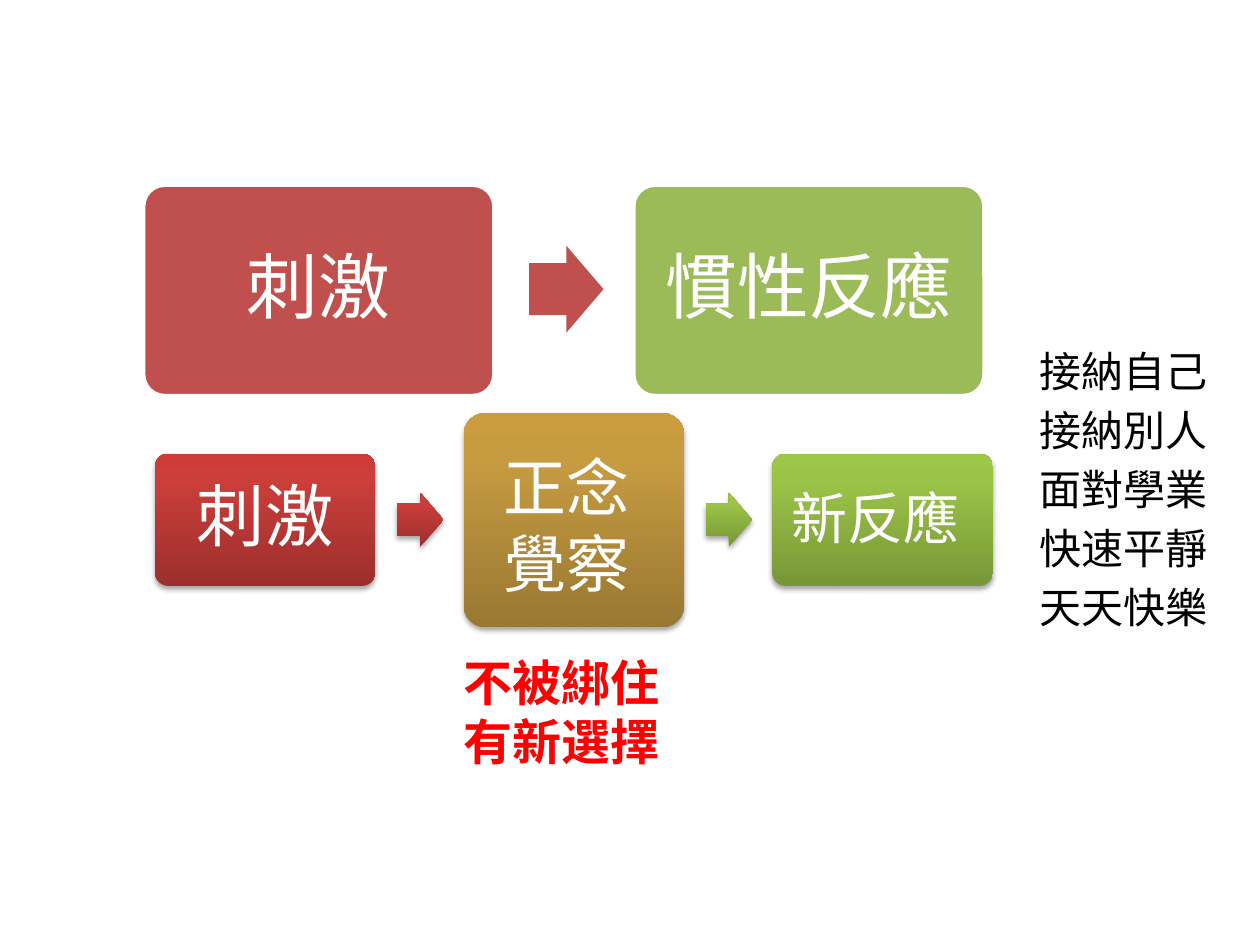
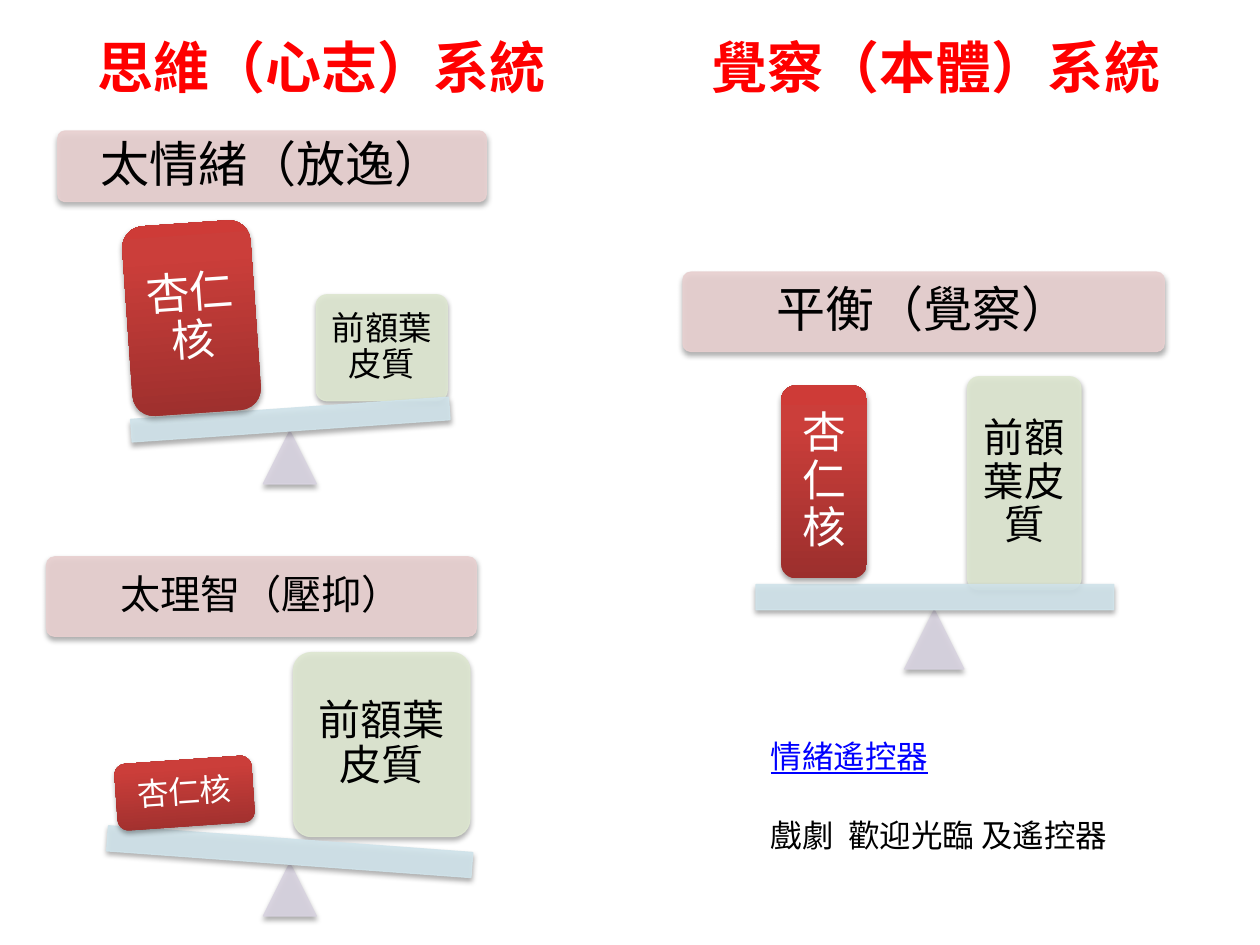
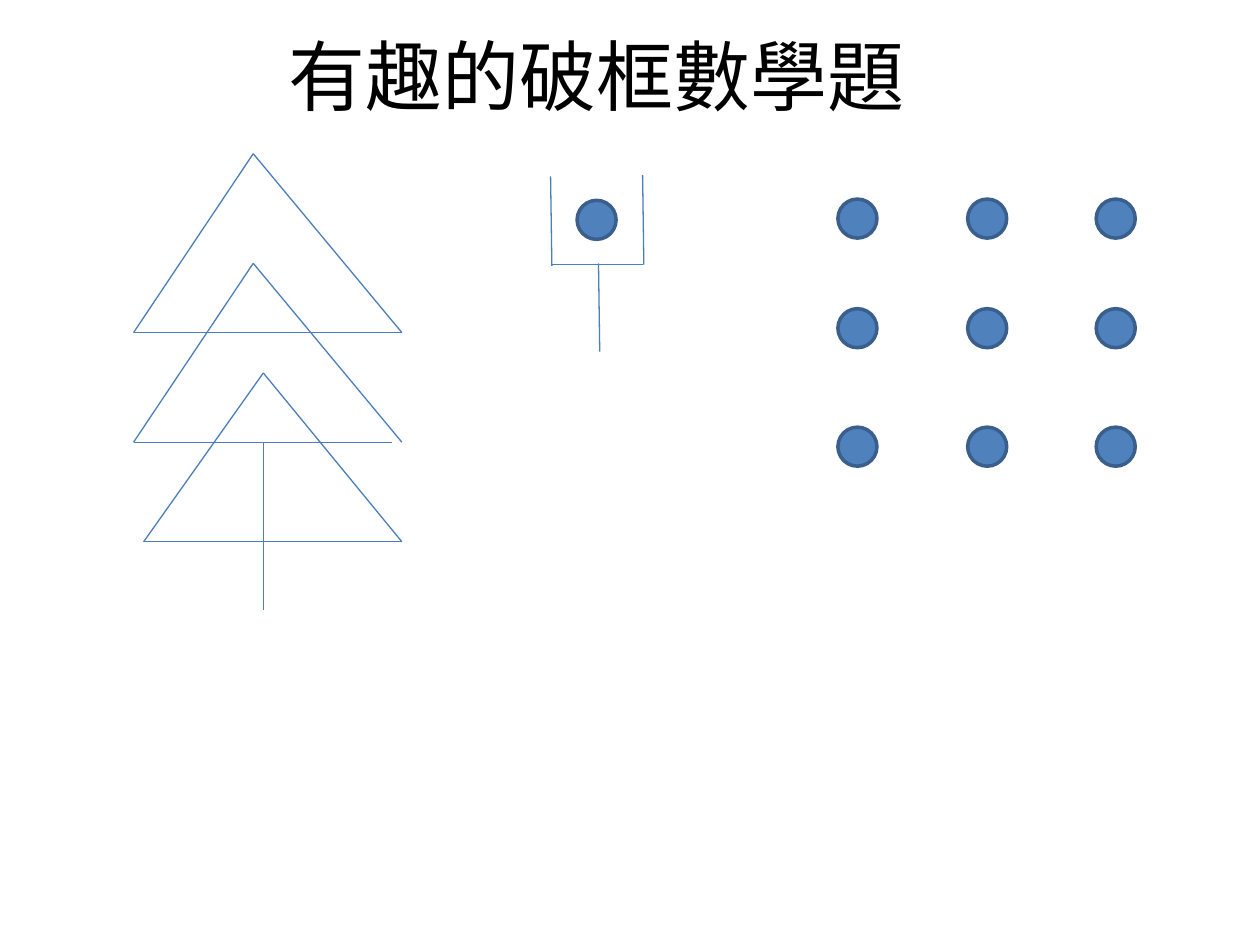
from dataclasses import dataclass
from itertools import product

from lxml.etree import SubElement
from pptx import Presentation
from pptx.dml.color import RGBColor
from pptx.enum.shapes import MSO_CONNECTOR, MSO_SHAPE
from pptx.enum.text import MSO_ANCHOR, MSO_AUTO_SIZE, PP_ALIGN
from pptx.oxml.ns import qn
from pptx.util import Inches, Pt

# Shared look
FONT = "Calibri"
TITLE_FONT = "Noto Sans CJK SC"
BLACK, WHITE, HEADING_RED, LINK_BLUE = "000000", "FFFFFF", "FF0000", "0000FF"
FLAT_RED, FLAT_GREEN = "C0504D", "9BBB59"
RED = ("9C2F2D", "CB3E3A", "CE3B37")
GOLD = ("997832", "C79C41", "CB9D3F")
GREEN = ("779737", "9BC348", "9DC746")
GRADIENT_STOPS = (0, 80, 100)
PINK, PALE_GREEN, LILAC, PALE_BLUE = "E8D0D0", "DEE7D1", "D8D3E0", "D0E3EA"
STROKE, DOT_FILL, DOT_LINE = "4B7EBC", "4F81BD", "3A5F8C"
CORNER = 0.1
DOT_SIZE = 0.31


@dataclass
class Box:
    left: float
    top: float
    width: float
    height: float
    rotation: float = 0

    def lengths(self):
        return [Inches(n) for n in (self.left, self.top, self.width, self.height)]


@dataclass
class Label:
    text: str
    size: float
    color: str = BLACK
    inset: float = 0.1
    bold: bool = False
    underline: bool = False
    font: str = FONT


@dataclass
class Seesaw:
    caption: Box
    caption_label: Label
    cortex: Box
    cortex_label: Label
    fulcrum: Box
    plank: Box
    amygdala: Box
    amygdala_label: Label


@dataclass
class Tier:
    apex: tuple[float, float]
    left: float
    right: float
    base: float
    base_right: float


def rgb(color: str) -> RGBColor:
    return RGBColor.from_string(color)


# Text
def add_run(paragraph, text: str, label: Label) -> None:
    run = paragraph.add_run()
    run.text = text
    font = run.font
    font.name, font.size, font.bold = label.font, Pt(label.size), label.bold
    font.underline = label.underline
    font.color.rgb = rgb(label.color)


def write_lines(shape, label: Label, wrap: bool = True) -> None:
    """Left-aligned lines from the top, one paragraph each."""
    frame = shape.text_frame
    frame.word_wrap = wrap
    frame.auto_size = MSO_AUTO_SIZE.SHAPE_TO_FIT_TEXT
    frame.vertical_anchor = MSO_ANCHOR.TOP
    for index, line in enumerate(label.text.split("\n")):
        paragraph = frame.add_paragraph() if index else frame.paragraphs[0]
        paragraph.alignment = PP_ALIGN.LEFT
        paragraph.space_before = Pt(0)
        add_run(paragraph, line, label)


def add_text(slide, box: Box, label: Label, wrap: bool = True) -> None:
    write_lines(slide.shapes.add_textbox(*box.lengths()), label, wrap)


def fill_placeholder(placeholder, box: Box, label: Label, wrap: bool = True) -> None:
    placeholder.left, placeholder.top, placeholder.width, placeholder.height = box.lengths()
    write_lines(placeholder, label, wrap)


def write_centred(shape, label: Label) -> None:
    frame = shape.text_frame
    frame.word_wrap = True
    frame.vertical_anchor = MSO_ANCHOR.MIDDLE
    inset = Inches(label.inset)
    frame.margin_left = frame.margin_right = inset
    frame.margin_top = frame.margin_bottom = inset
    paragraph = frame.paragraphs[0]
    paragraph.alignment = PP_ALIGN.CENTER
    paragraph.line_spacing = 0.9
    add_run(paragraph, label.text, label)


# Shapes
def add_shape(slide, kind, box: Box, label: Label | None = None, corner: float | None = None):
    shape = slide.shapes.add_shape(kind, *box.lengths())
    shape.rotation = box.rotation
    shape.shadow.inherit = False
    shape.line.fill.background()
    if corner is not None:
        shape.adjustments[0] = corner
    if label:
        write_centred(shape, label)
    return shape


def paint(shape, fill: str, line: str | None = None, width: float = 2) -> None:
    shape.fill.solid()
    shape.fill.fore_color.rgb = rgb(fill)
    if line:
        shape.line.color.rgb = rgb(line)
        shape.line.width = Pt(width)


def add_color(parent, color: str, alpha: int | None = None) -> None:
    element = SubElement(parent, qn("a:srgbClr"), val=color)
    if alpha is not None:
        SubElement(element, qn("a:alpha"), val=str(alpha * 1000))


def add_shadow(shape) -> None:
    effects = shape._element.spPr.find(qn("a:effectLst"))
    shadow = SubElement(effects, qn("a:outerShdw"), blurRad=str(Pt(3.1)), dist=str(Pt(1.8)),
                        dir="5400000", rotWithShape="0")
    add_color(shadow, BLACK, 35)


def paint_glossy(shape, colors: tuple[str, str, str]) -> None:
    shape.fill.gradient()
    shape.fill.gradient_angle = 90
    stops = shape._element.spPr.find(qn("a:gradFill")).find(qn("a:gsLst"))
    for stop in list(stops):
        stops.remove(stop)
    for position, color in zip(GRADIENT_STOPS, colors):
        add_color(SubElement(stops, qn("a:gs"), pos=str(position * 1000)), color)
    add_shadow(shape)


def paint_pale(shape, color: str) -> None:
    paint(shape, color, color, 0.75)
    for element in shape._element.spPr.iter(qn("a:srgbClr")):
        SubElement(element, qn("a:alpha"), val="90000")
    add_shadow(shape)


def add_line(slide, start: tuple[float, float], end: tuple[float, float]) -> None:
    points = [Inches(n) for n in (*start, *end)]
    connector = slide.shapes.add_connector(MSO_CONNECTOR.STRAIGHT, *points)
    connector.line.color.rgb = rgb(STROKE)
    connector.line.width = Pt(0.75)
    SubElement(connector._element.spPr, qn("a:effectLst"))


def add_dot(slide, left: float, top: float) -> None:
    dot = add_shape(slide, MSO_SHAPE.OVAL, Box(left, top, DOT_SIZE, DOT_SIZE))
    paint(dot, DOT_FILL, DOT_LINE)


def add_arrow(slide, box: Box):
    arrow = add_shape(slide, MSO_SHAPE.RIGHT_ARROW, box, corner=0.6)
    arrow.adjustments[1] = 0.5
    return arrow


def add_card(slide, box: Box, label: Label | None = None, corner: float | None = CORNER):
    return add_shape(slide, MSO_SHAPE.ROUNDED_RECTANGLE, box, label, corner)


# Slide 1: from habit to a new response
def build_response_slide(presentation) -> None:
    slide = presentation.slides.add_slide(presentation.slide_layouts[6])

    # Mindful path
    paint_glossy(add_card(slide, Box(1.23, 3.6, 1.75, 1.05), Label("刺激", 39, WHITE, 0.16)), RED)
    paint_glossy(add_arrow(slide, Box(3.15, 3.91, 0.37, 0.43)), RED)
    paint_glossy(add_card(slide, Box(3.68, 3.28, 1.75, 1.7)), GOLD)
    paint_glossy(add_arrow(slide, Box(5.6, 3.91, 0.37, 0.43)), GREEN)
    paint_glossy(add_card(slide, Box(6.13, 3.6, 1.75, 1.05)), GREEN)

    # Habitual path
    for left, text, color in ((1.14, "刺激", FLAT_RED), (5.03, "慣性反應", FLAT_GREEN)):
        card = add_card(slide, Box(left, 1.47, 2.78, 1.67), Label(text, 41, WHITE, 0.16))
        paint(card, color, WHITE)
    paint(add_arrow(slide, Box(4.2, 1.95, 0.59, 0.69)), FLAT_RED)

    # Words on and around the path
    add_text(slide, Box(3.58, 5.13, 1.77, 1.04),
             Label("不被綁住\n有新選擇", 28, HEADING_RED, bold=True), wrap=False)
    add_text(slide, Box(3.9, 3.51, 1.34, 1.31), Label("正念\n覺察", 36, WHITE))
    add_text(slide, Box(6.18, 3.79, 1.55, 0.64), Label("新反應", 32, WHITE), wrap=False)
    benefits = ("接納自己", "接納別人", "面對學業", "快速平靜", "天天快樂")
    for index, benefit in enumerate(benefits):
        add_text(slide, Box(8.15, 2.69 + 0.47 * index, 1.57, 0.5), Label(benefit, 24))


# Slide 2: three seesaws
CORTEX, AMYGDALA = "前額葉皮質", "杏仁核"
SEESAWS = (
    Seesaw(Box(0.46, 1.04, 3.4, 0.56), Label("太情緒（放逸）", 28, inset=0.12),
           Box(2.51, 2.34, 1.04, 0.84), Label(CORTEX, 19, inset=0.07),
           Box(2.09, 3.42, 0.42, 0.42), Box(1.04, 3.24, 2.53, 0.18, 356),
           Box(1.01, 1.77, 1.02, 1.51, 356), Label(AMYGDALA, 25, WHITE, 0.08)),
    Seesaw(Box(0.37, 4.42, 3.41, 0.63), Label("太理智（壓抑）", 23),
           Box(2.33, 5.18, 1.4, 1.46), Label(CORTEX, 24),
           Box(2.09, 6.85, 0.42, 0.42), Box(0.85, 6.66, 2.9, 0.2, 4.2),
           Box(0.92, 6.03, 1.09, 0.53, 356), Label(AMYGDALA, 18, WHITE, 0.07)),
    Seesaw(Box(5.42, 2.16, 3.82, 0.63), Label("平衡（覺察）", 28, inset=0.12),
           Box(7.68, 2.99, 0.9, 1.69), Label(CORTEX, 23, inset=0.08),
           Box(7.18, 4.84, 0.47, 0.47), Box(6, 4.64, 2.84, 0.2),
           Box(6.2, 3.06, 0.68, 1.53), Label(AMYGDALA, 25, WHITE)),
)


def draw_seesaw(slide, seesaw: Seesaw) -> None:
    paint_pale(add_card(slide, seesaw.caption, seesaw.caption_label), PINK)
    paint_pale(add_card(slide, seesaw.cortex, seesaw.cortex_label), PALE_GREEN)
    paint_pale(add_shape(slide, MSO_SHAPE.ISOSCELES_TRIANGLE, seesaw.fulcrum), LILAC)
    paint_pale(add_shape(slide, MSO_SHAPE.RECTANGLE, seesaw.plank), PALE_BLUE)
    paint_glossy(add_card(slide, seesaw.amygdala, seesaw.amygdala_label, corner=None), RED)


def build_balance_slide(presentation) -> None:
    slide = presentation.slides.add_slide(presentation.slide_layouts[4])
    headings = {1: (0.67, "思維（心志）系統"), 3: (5.55, "覺察（本體）系統")}
    for placeholder in list(slide.placeholders):
        index = placeholder.placeholder_format.idx
        if index in headings:
            left, text = headings[index]
            fill_placeholder(placeholder, Box(left, 0.21, 4.72, 0.64),
                             Label(text, 32, HEADING_RED, bold=True))
        else:
            placeholder._element.getparent().remove(placeholder._element)

    for seesaw in SEESAWS:
        draw_seesaw(slide, seesaw)

    # Activities
    add_text(slide, Box(6.02, 5.8, 1.46, 0.4),
             Label("情緒遙控器", 18, LINK_BLUE, underline=True), wrap=False)
    add_text(slide, Box(6.02, 6.43, 3.62, 0.4), Label("戲劇  歡迎光臨 及遙控器", 18))


# Slide 3: line and dot puzzles
TREE = (
    Tier((2.01, 1.22), 1.06, 3.19, 2.64, 3.19),
    Tier((2.01, 2.09), 1.06, 3.19, 3.51, 3.11),
    Tier((2.09, 2.96), 1.14, 3.19, 4.3, 3.19),
)
CUP = (
    ((4.37, 1.4), (4.38, 2.11)),
    ((4.75, 2.09), (4.76, 2.79)),
    ((5.1, 1.39), (5.11, 2.1)),
    ((4.38, 2.1), (5.1, 2.1)),
)


def build_puzzle_slide(presentation) -> None:
    slide = presentation.slides.add_slide(presentation.slide_layouts[5])
    fill_placeholder(slide.shapes.title, Box(2.19, 0.18, 5.14, 0.84),
                     Label("有趣的破框數學題", 44, font=TITLE_FONT), wrap=False)

    # Tree with its trunk
    for tier in TREE:
        add_line(slide, tier.apex, (tier.left, tier.base))
        add_line(slide, tier.apex, (tier.right, tier.base))
        add_line(slide, (tier.left, tier.base), (tier.base_right, tier.base))
    add_line(slide, (2.09, 3.51), (2.09, 4.84))

    # Cup holding a dot
    for start, end in CUP:
        add_line(slide, start, end)
    add_dot(slide, 4.58, 1.59)

    # Nine dots
    for top, left in product((1.58, 2.45, 3.39), (6.65, 7.68, 8.7)):
        add_dot(slide, left, top)


def main() -> None:
    presentation = Presentation()
    presentation.slide_width, presentation.slide_height = Inches(10), Inches(7.5)
    build_response_slide(presentation)
    build_balance_slide(presentation)
    build_puzzle_slide(presentation)
    presentation.save("out.pptx")


if __name__ == "__main__":
    main()
